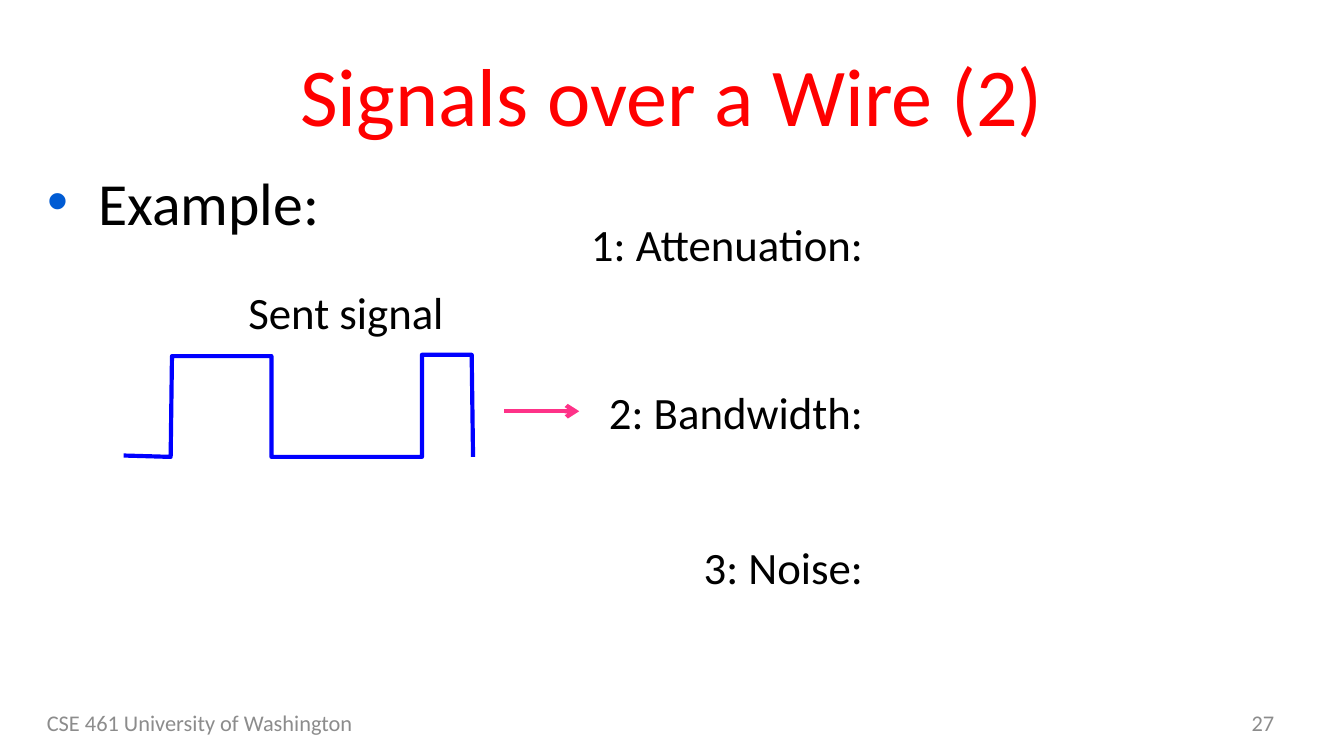
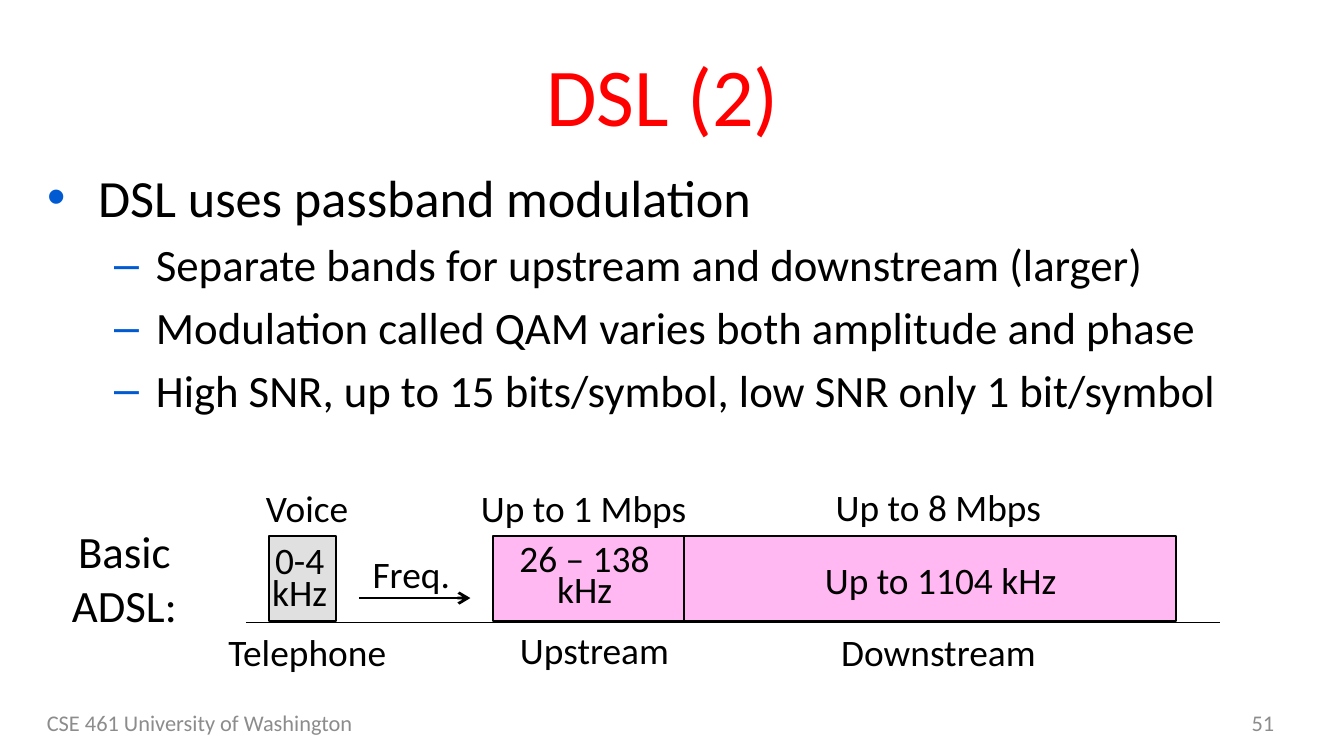
from lxml import etree
from pptx import Presentation
from pptx.dml.color import RGBColor
from pptx.enum.shapes import MSO_CONNECTOR, MSO_SHAPE
from pptx.enum.text import MSO_ANCHOR, MSO_AUTO_SIZE, PP_ALIGN
from pptx.oxml.ns import qn
from pptx.util import Inches, Pt

LEFT, CENTER, RIGHT = PP_ALIGN.LEFT, PP_ALIGN.CENTER, PP_ALIGN.RIGHT
TOP, MIDDLE = MSO_ANCHOR.TOP, MSO_ANCHOR.MIDDLE
FIXED, GROW = MSO_AUTO_SIZE.NONE, MSO_AUTO_SIZE.SHAPE_TO_FIT_TEXT
STRAIGHT, RECTANGLE = MSO_CONNECTOR.STRAIGHT, MSO_SHAPE.RECTANGLE

# Shared look
SLIDE_WIDTH = Inches(10)
SLIDE_HEIGHT = SLIDE_WIDTH * 9 // 16
RED = RGBColor(0xFF, 0x00, 0x00)
BLACK = RGBColor(0x00, 0x00, 0x00)
GRAY = RGBColor(0x8C, 0x8C, 0x8C)
SIGNAL_BLUE = RGBColor(0x00, 0x00, 0xFF)
ARROW_PINK = RGBColor(0xFE, 0x32, 0x88)
VOICE_GRAY = RGBColor(0xE0, 0xE0, 0xE0)
DATA_PINK = RGBColor(0xFF, 0xB8, 0xF2)
BULLET_BLUE = RGBColor(0x00, 0x5B, 0xD3)
FONT = "Calibri"
FOOTER = "CSE 461 University of Washington"
TITLE_AREA = (0.25, 0.23, 9.5, 0.94)
BODY_AREA = (0.25, 1.18, 9.5, 3.71)
FOOTER_AREA = (0.25, 5.23, 3.17, 0.3)
NUMBER_AREA = (7.25, 5.23, 2.33, 0.3)
# Per list level: text indent, hanging indent, bullet
LEVELS = [(0.38, -0.38, "•"), (0.81, -0.31, "–")]

# Slide 1: signals over a wire; bullets are (level, size, text)
SIGNALS_BULLETS = [(0, 32, "Example:")]
SENT_SIGNAL = [(0.92, 3.39), (1.27, 3.4), (1.28, 2.65), (2.02, 2.65), (2.02, 3.4),
               (3.14, 3.4), (3.14, 2.64), (3.51, 2.64), (3.52, 3.4)]
EFFECTS_RIGHT = 6.52
EFFECTS = [("1: Attenuation:", 1.56, 2.25), ("2: Bandwidth:", 2.81, 2.11),
           ("3: Noise:", 3.97, 1.4)]  # text, top, width

# Slide 2: DSL
DSL_BULLETS = [
    (0, 28, "DSL uses passband modulation"),
    (1, 24, "Separate bands for upstream and downstream (larger)"),
    (1, 24, "Modulation called QAM varies both amplitude and phase"),
    (1, 24, "High SNR, up to 15 bits/symbol, low SNR only 1 bit/symbol"),
]
BAND_TOP, BAND_HEIGHT = 3.99, 0.63
AXIS_Y = 4.63
BANDS = [(2, 0.5, VOICE_GRAY), (3.67, 1.42, DATA_PINK), (5.09, 3.66, DATA_PINK)]
RANGES = [(["0-4", "kHz"], (1.92, 4.03, 0.62, 0.59), 0.7),
          (["26 – 138", "kHz"], (3.76, 4.02, 1.18, 0.57), 0.7),
          (["Up to 1104 kHz"], (6.03, 4.09, 1.94, 0.44), None)]
BAND_LABELS = [
    ("Voice", (1.88, 3.56, 0.82, 0.44)),
    ("Up to 1 Mbps", (3.48, 3.56, 1.74, 0.44)),
    ("Up to 8 Mbps", (6.12, 3.55, 1.74, 0.44)),
    ("Telephone", (1.6, 4.63, 1.39, 0.31)),
    ("Upstream", (3.77, 4.62, 1.32, 0.31)),
    ("Downstream", (6.16, 4.63, 1.66, 0.31)),
]


def inches(values):
    return [Inches(value) for value in values]


def apply(target, formats):
    for name, value in formats.items():
        setattr(target, name, value)


def style_font(font, size, color):
    apply(font, {"name": FONT, "size": Pt(size)})
    font.color.rgb = color


def style_line(line, color, width):
    line.color.rgb = color
    line.width = Pt(width)


def place(shape, area):
    apply(shape, dict(zip(("left", "top", "width", "height"), inches(area))))


def add_label(page, lines, area, size, color=BLACK, align=LEFT, anchor=TOP,
              spacing=None, wrap=False, fit=GROW):
    frame = page.shapes.add_textbox(*inches(area)).text_frame
    frame.text = "\n".join(lines)
    apply(frame, {"word_wrap": wrap, "vertical_anchor": anchor, "auto_size": fit})
    for para in frame.paragraphs:
        apply(para, {"alignment": align, "line_spacing": spacing})
        style_font(para.font, size, color)


def add_line(page, start, end, color, width, arrow=False):
    connector = page.shapes.add_connector(STRAIGHT, *inches(start + end))
    style_line(connector.line, color, width)
    properties = connector._element.spPr
    if arrow:
        etree.SubElement(properties.find(qn("a:ln")), qn("a:tailEnd"), type="arrow")
    etree.SubElement(properties, qn("a:effectLst"))


def add_bullet(para, level):
    margin, hanging, mark = LEVELS[level]
    para.level = level
    properties = para._p.get_or_add_pPr()
    properties.set("marL", str(Inches(margin)))
    properties.set("indent", str(Inches(hanging)))
    color = etree.SubElement(properties, qn("a:buClr"))
    etree.SubElement(color, qn("a:srgbClr"), val=str(BULLET_BLUE))
    etree.SubElement(properties, qn("a:buFont"), typeface="Arial")
    etree.SubElement(properties, qn("a:buChar"), char=mark)


def add_page(deck, title, bullets, number):
    page = deck.slides.add_slide(deck.slide_layouts[1])

    # Title
    heading = page.shapes.title
    place(heading, TITLE_AREA)
    heading.text_frame.text = title
    apply(heading.text_frame, {"vertical_anchor": MIDDLE, "auto_size": FIXED})
    para = heading.text_frame.paragraphs[0]
    para.alignment = CENTER
    style_font(para.font, 44, RED)

    # Bullet list
    body = page.placeholders[1]
    place(body, BODY_AREA)
    frame = body.text_frame
    frame.text = "\n".join(text for _, _, text in bullets)
    frame.auto_size = FIXED
    for para, (level, size, _) in zip(frame.paragraphs, bullets):
        add_bullet(para, level)
        style_font(para.font, size, BLACK)
    frame.paragraphs[0].space_before = Pt(0)

    # Footer and page number
    for text, area, align in [(FOOTER, FOOTER_AREA, LEFT), (str(number), NUMBER_AREA, RIGHT)]:
        add_label(page, [text], area, 12, GRAY, align, MIDDLE, wrap=True, fit=FIXED)
    return page


def build_signals(deck):
    page = add_page(deck, "Signals over a Wire (2)", SIGNALS_BULLETS, 27)

    # Sent signal
    points = [tuple(inches(point)) for point in SENT_SIGNAL]
    builder = page.shapes.build_freeform(*points[0])
    builder.add_line_segments(points[1:], close=False)
    wave = builder.convert_to_shape()
    wave.shadow.inherit = False
    wave.fill.background()
    style_line(wave.line, SIGNAL_BLUE, 2.25)

    # Effects of the wire, aligned on the right
    for text, top, width in EFFECTS:
        add_label(page, [text], (EFFECTS_RIGHT - width, top, width, 0.5), 24, align=RIGHT)

    # Signal label and arrow
    add_label(page, ["Sent signal"], (1.75, 2.07, 1.67, 0.5), 24)
    add_line(page, (3.75, 3.06), (4.31, 3.06), ARROW_PINK, 2.25, arrow=True)


def build_dsl(deck):
    page = add_page(deck, "DSL (2) ", DSL_BULLETS, 51)

    # Frequency bands
    for left, width, color in BANDS:
        area = inches((left, BAND_TOP, width, BAND_HEIGHT))
        band = page.shapes.add_shape(RECTANGLE, *area)
        band.shadow.inherit = False
        band.fill.solid()
        band.fill.fore_color.rgb = color
        style_line(band.line, BLACK, 1)
    for lines, area, spacing in RANGES:
        add_label(page, lines, area, 20, align=CENTER, anchor=MIDDLE, spacing=spacing)
    for text, area in BAND_LABELS:
        add_label(page, [text], area, 20)

    # Frequency axis
    add_line(page, (1.83, AXIS_Y), (9.08, AXIS_Y), BLACK, 0.75)
    add_line(page, (2.67, 4.45), (3.5, 4.45), BLACK, 1.5, arrow=True)
    add_label(page, ["Freq."], (2.67, 4.05, 0.78, 0.34), 20, align=CENTER)
    add_label(page, ["Basic", "ADSL:"], (0.43, 3.85, 0.99, 0.91), 24, align=CENTER)


def main():
    deck = Presentation()
    apply(deck, {"slide_width": SLIDE_WIDTH, "slide_height": SLIDE_HEIGHT})
    build_signals(deck)
    build_dsl(deck)
    deck.save("out.pptx")


if __name__ == "__main__":
    main()
